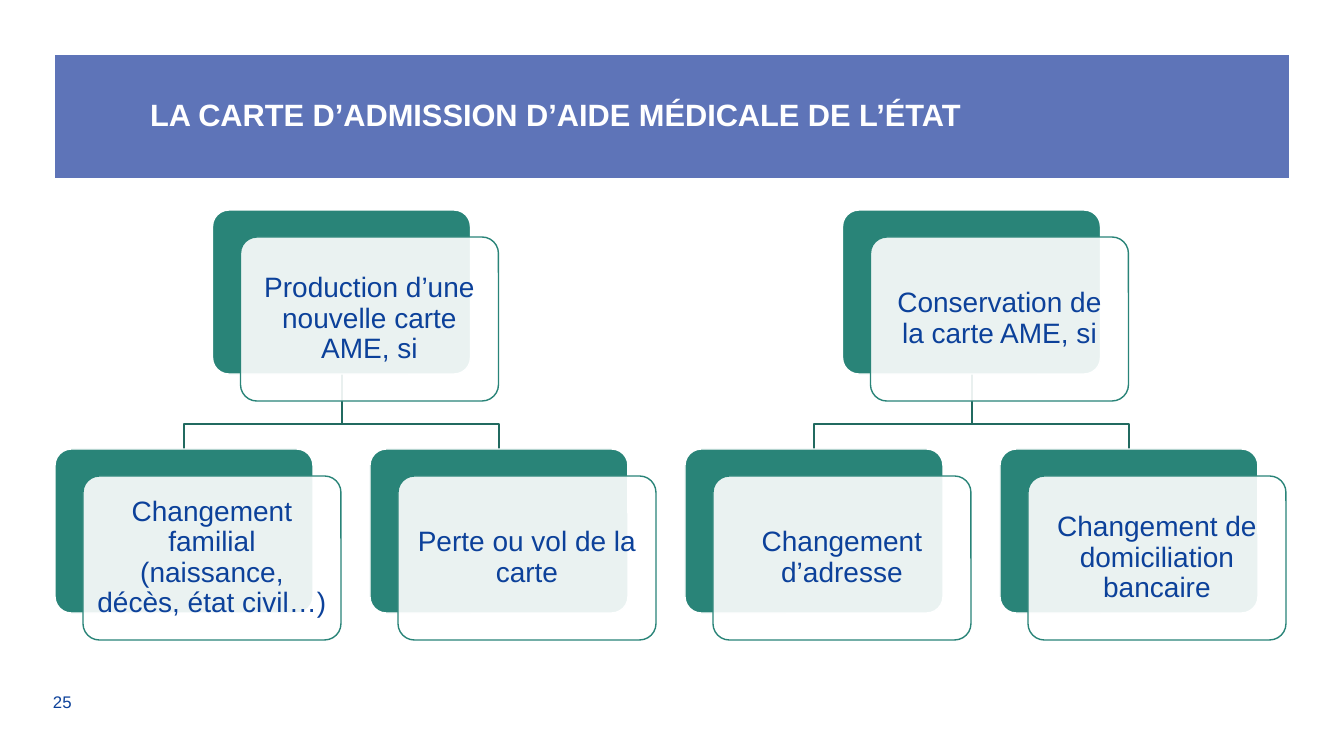
from lxml import etree
from pptx import Presentation
from pptx.dml.color import RGBColor
from pptx.enum.shapes import MSO_SHAPE
from pptx.enum.text import MSO_ANCHOR, MSO_AUTO_SIZE, PP_ALIGN
from pptx.oxml.ns import qn
from pptx.util import Emu, Pt

ROUNDED = MSO_SHAPE.ROUNDED_RECTANGLE
MIDDLE = MSO_ANCHOR.MIDDLE
NO_AUTOFIT = MSO_AUTO_SIZE.NONE
LEFT, CENTER = PP_ALIGN.LEFT, PP_ALIGN.CENTER
EMU_PER_PX = 914400 / 100.8
TITLE_ONLY = 5

# Card geometry, in px
CARD_WIDTH, CARD_HEIGHT = 258, 164
FRONT_SHIFT_X, FRONT_SHIFT_Y = 28, 27
FIRST_LEFT, COLUMN_PITCH = 55, 315
PARENT_TOP, CHILD_TOP, BRANCH_Y = 210, 449, 424

TREES = [
    ("Production d’une nouvelle carte AME, si",
     ["Changement familial (naissance, décès, état civil…)",
      "Perte ou vol de la carte"]),
    ("Conservation de la carte AME, si",
     ["Changement d’adresse",
      "Changement de domiciliation bancaire"]),
]


def px(length):
    return Emu(round(length * EMU_PER_PX))


def color(hex_string):
    return RGBColor.from_string(hex_string)


class SlideBuilder:
    FONT = "Arial"
    WHITE, BAND, TEXT = "FFFFFF", "5E74B8", "0C419A"
    GREEN, BRANCH = "298478", "216A60"

    def __init__(self, presentation):
        self.slide = presentation.slides.add_slide(
            presentation.slide_layouts[TITLE_ONLY])

    def set_text(self, shape, text, size, hex_string, align, insets,
                 bold=False, line_spacing=0.9):
        frame = shape.text_frame
        frame.text = text
        frame.word_wrap = True
        frame.auto_size = NO_AUTOFIT
        frame.vertical_anchor = MIDDLE
        (frame.margin_left, frame.margin_top,
         frame.margin_right, frame.margin_bottom) = map(px, insets)
        paragraph = frame.paragraphs[0]
        paragraph.alignment = align
        paragraph.line_spacing = line_spacing
        font = paragraph.runs[0].font
        font.name, font.size, font.bold = self.FONT, Pt(size), bold
        font.color.rgb = color(hex_string)

    def title(self, text, left, top, width, height):
        shape = self.slide.shapes.title
        shape.left, shape.top = px(left), px(top)
        shape.width, shape.height = px(width), px(height)
        shape.fill.solid()
        shape.fill.fore_color.rgb = color(self.BAND)
        self.set_text(shape, text, 22, self.WHITE, LEFT, (95, 8, 8, 8),
                      bold=True)

    def label(self, text, left, top, width, height):
        shape = self.slide.shapes.add_textbox(
            px(left), px(top), px(width), px(height))
        self.set_text(shape, text, 12, self.TEXT, LEFT, (10, 5, 10, 5),
                      line_spacing=1.0)

    def branch(self, points):
        builder = self.slide.shapes.build_freeform(*points[0], scale=EMU_PER_PX)
        builder.add_line_segments(points[1:], close=False)
        shape = builder.convert_to_shape()
        shape.shadow.inherit = False
        shape.fill.background()
        shape.line.color.rgb = color(self.BRANCH)
        shape.line.width = Pt(1)

    def rounded(self, left, top, fill, line):
        shape = self.slide.shapes.add_shape(
            ROUNDED, px(left), px(top), px(CARD_WIDTH), px(CARD_HEIGHT))
        shape.adjustments[0] = 0.1
        shape.shadow.inherit = False
        shape.fill.solid()
        shape.fill.fore_color.rgb = color(fill)
        shape.line.color.rgb = color(line)
        shape.line.width = Pt(1)
        return shape

    def card(self, text, left, top):
        self.rounded(left, top, self.GREEN, self.WHITE)
        front = self.rounded(left + FRONT_SHIFT_X, top + FRONT_SHIFT_Y,
                             self.WHITE, self.GREEN)
        # Let the back card show through the front one
        fill_color = front.element.spPr.find(qn("a:solidFill"))[0]
        etree.SubElement(fill_color, qn("a:alpha"), val="90000")
        self.set_text(front, text, 20, self.TEXT, CENTER, (8, 8, 8, 8))


def main():
    presentation = Presentation()
    presentation.slide_width, presentation.slide_height = px(1344), px(756)
    builder = SlideBuilder(presentation)

    # Title band and page number
    builder.title("LA CARTE D’ADMISSION D’AIDE MÉDICALE DE L’ÉTAT",
                  55, 55, 1234, 123)
    builder.label("25", 43, 686, 80, 31)

    # Place each parent midway above its two children
    cards, branches = [], []
    for tree_index, (parent, children) in enumerate(TREES):
        first_left = FIRST_LEFT + 2 * tree_index * COLUMN_PITCH
        parent_left = first_left + COLUMN_PITCH / 2
        parent_x = parent_left + CARD_WIDTH / 2
        cards.append((parent, parent_left, PARENT_TOP))
        for child_index, child in enumerate(children):
            child_left = first_left + child_index * COLUMN_PITCH
            child_x = child_left + CARD_WIDTH / 2
            cards.append((child, child_left, CHILD_TOP))
            branches.append([(parent_x, PARENT_TOP + CARD_HEIGHT),
                             (parent_x, BRANCH_Y), (child_x, BRANCH_Y),
                             (child_x, CHILD_TOP)])

    # Branches lie behind the cards
    for points in branches:
        builder.branch(points)
    for card in cards:
        builder.card(*card)

    presentation.save("out.pptx")


if __name__ == "__main__":
    main()
